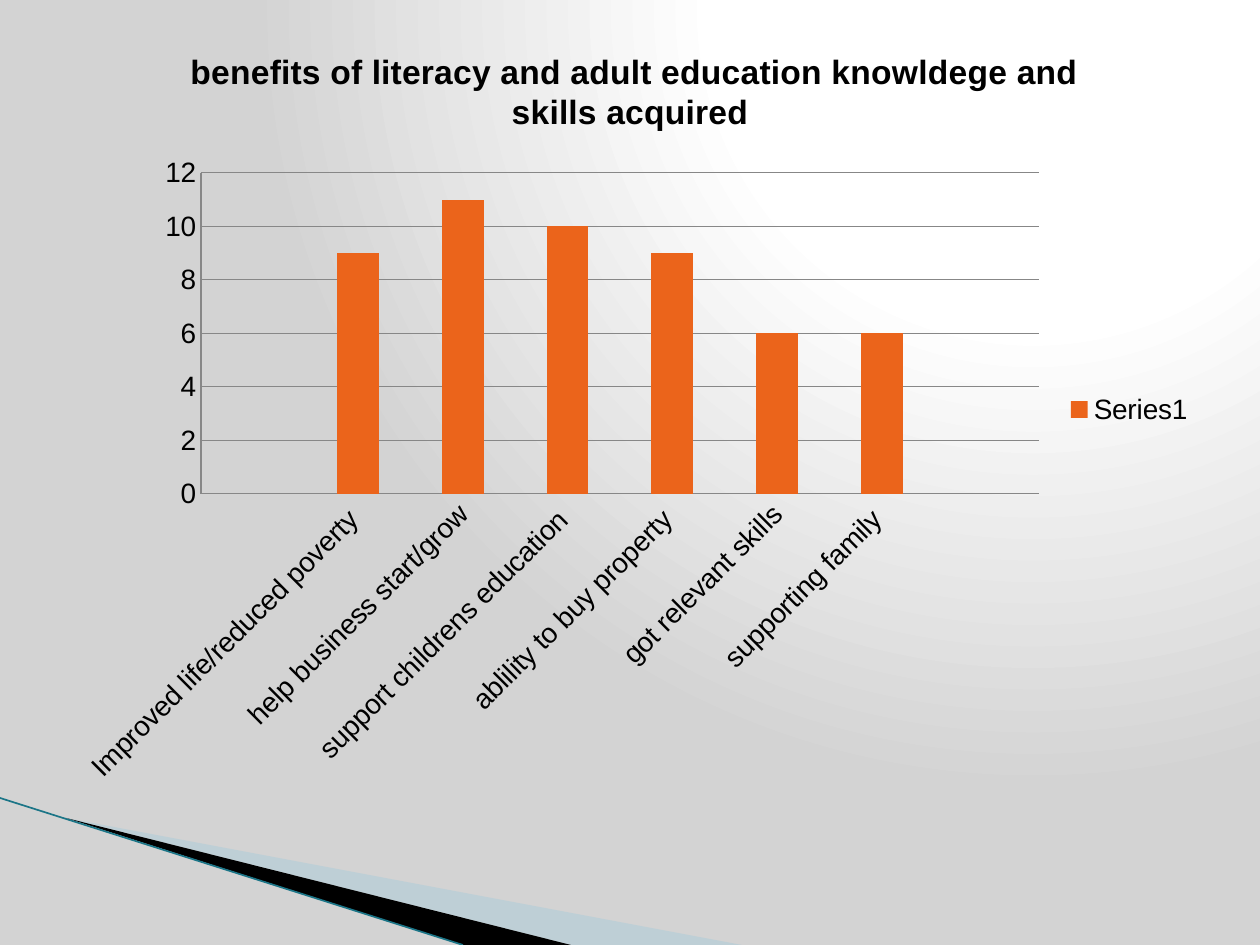
from lxml import etree
from pptx import Presentation
from pptx.chart.data import CategoryChartData
from pptx.dml.color import RGBColor
from pptx.enum.chart import XL_CHART_TYPE, XL_LEGEND_POSITION, XL_TICK_MARK
from pptx.enum.shapes import MSO_CONNECTOR
from pptx.oxml import parse_xml
from pptx.oxml.ns import nsdecls, qn
from pptx.util import Pt

COLUMNS = XL_CHART_TYPE.COLUMN_CLUSTERED
LEGEND_RIGHT = XL_LEGEND_POSITION.RIGHT
NO_TICKS = XL_TICK_MARK.NONE
STRAIGHT = MSO_CONNECTOR.STRAIGHT

EMU_PER_PX = 914400 / 126
SLIDE_WIDTH, SLIDE_HEIGHT = 1260, 945
FONT = "Arial"
COLORS = {
    "light": "FFFFFF",
    "shade": "D3D3D3",
    "pale_wedge": "A0CBDC",
    "dark": "000000",
    "edge": "1B7587",
    "bar": "EB641B",
    "grid": "878787",
}
TITLE = "benefits of literacy and adult education knowldege and skills acquired "
BENEFITS = [
    ("", None),
    ("Improved life/reduced poverty ", 9),
    ("help business start/grow", 11),
    ("support childrens education ", 10),
    ("ablility to buy property ", 9),
    ("got relevant skills", 6),
    ("supporting family ", 6),
    ("", None),
]


def px(length):
    return round(length * EMU_PER_PX)


def rgb(name):
    return RGBColor.from_string(COLORS[name])


def style_font(font, size, bold=False):
    font.name = FONT
    font.size = Pt(size)
    font.bold = bold
    font.color.rgb = rgb("dark")


def paint_background(slide):
    """Radial gradient, brightest near the top right."""
    fill = slide.background.fill
    fill.gradient()
    stops = "".join(
        f'<a:gs pos="{position * 1000}"><a:srgbClr val="{COLORS[name]}"/></a:gs>'
        for position, name in ((0, "light"), (40, "light"), (100, "shade"))
    )
    gradient = parse_xml(
        f'<a:gradFill {nsdecls("a")} rotWithShape="1"><a:gsLst>{stops}</a:gsLst>'
        '<a:path path="circle"><a:fillToRect l="65000" t="0" r="0" b="98000"/>'
        "</a:path></a:gradFill>"
    )
    background = slide.background._cSld.bg.bgPr
    background.replace(background.find(qn("a:gradFill")), gradient)


def add_wedge(slide, points, color, opacity=100):
    builder = slide.shapes.build_freeform(*points[0], scale=EMU_PER_PX)
    builder.add_line_segments(points[1:], close=True)
    shape = builder.convert_to_shape()
    shape.shadow.inherit = False
    shape.fill.solid()
    shape.fill.fore_color.rgb = rgb(color)
    shape.line.fill.background()
    if opacity < 100:
        fill_color = shape._element.spPr.find(".//" + qn("a:srgbClr"))
        etree.SubElement(fill_color, qn("a:alpha"), val=str(opacity * 1000))


def add_corner_sweep(slide, left, top, width, height):
    """Two wedges and an edge line that fan out from the left side."""
    right, bottom = left + width, top + height
    tip = (left + 66, top + 20)
    add_wedge(slide, [tip, (right, bottom), (left + 571, bottom)], "pale_wedge", 40)
    add_wedge(slide, [tip, (left + 571, bottom), (left + 463, bottom)], "dark")
    edge = slide.shapes.add_connector(
        STRAIGHT, px(left), px(top), px(left + 463), px(bottom)
    )
    edge.line.color.rgb = rgb("edge")
    edge.line.width = Pt(0.95)
    etree.SubElement(edge._element.spPr, qn("a:effectLst"))


def place_plot(chart, left, top, width, height):
    """Fix the inner plot area, given as fractions of the chart."""
    plot_area = chart._chartSpace.chart.plotArea
    for old_layout in plot_area.findall(qn("c:layout")):
        plot_area.remove(old_layout)
    places = "".join(
        f'<c:{tag} val="{value:.4f}"/>'
        for tag, value in (("x", left), ("y", top), ("w", width), ("h", height))
    )
    plot_area.insert(0, parse_xml(
        f'<c:layout {nsdecls("c")}><c:manualLayout><c:layoutTarget val="inner"/>'
        f'<c:xMode val="edge"/><c:yMode val="edge"/>{places}'
        "</c:manualLayout></c:layout>"
    ))


def add_benefits_chart(slide, left, top, width, height):
    data = CategoryChartData()
    data.categories = [label for label, _ in BENEFITS]
    data.add_series("Series1", [count for _, count in BENEFITS])
    chart = slide.shapes.add_chart(
        COLUMNS, px(left), px(top), px(width), px(height), data
    ).chart
    style_font(chart.font, 16)

    chart.has_title = True
    run = chart.chart_title.text_frame.paragraphs[0].add_run()
    run.text = TITLE
    style_font(run.font, 19.2, bold=True)
    chart.chart_title.include_in_layout = False

    chart.has_legend = True
    chart.legend.position = LEGEND_RIGHT
    chart.legend.include_in_layout = False

    plot = chart.plots[0]
    plot.gap_width = 150
    plot.vary_by_categories = False
    bars = plot.series[0].format.fill
    bars.solid()
    bars.fore_color.rgb = rgb("bar")

    for axis in (chart.category_axis, chart.value_axis):
        axis.major_tick_mark = axis.minor_tick_mark = NO_TICKS
        axis.format.line.color.rgb = rgb("grid")
        axis.format.line.width = Pt(0.75)
        style_font(axis.tick_labels.font, 16)
    labels = chart.category_axis._element.find(qn("c:txPr"))
    labels.find(qn("a:bodyPr")).set("rot", str(-45 * 60000))

    values = chart.value_axis
    values.minimum_scale, values.maximum_scale, values.major_unit = 0, 12, 2
    values.has_major_gridlines = True
    values.major_gridlines.format.line.color.rgb = rgb("grid")
    values.major_gridlines.format.line.width = Pt(0.75)
    place_plot(chart, 138 / width, 152 / height, 838 / width, 321 / height)


def main():
    presentation = Presentation()
    presentation.slide_width = px(SLIDE_WIDTH)
    presentation.slide_height = px(SLIDE_HEIGHT)
    slide = presentation.slides.add_slide(presentation.slide_layouts[6])
    paint_background(slide)
    add_corner_sweep(slide, 0, 798, 742, 147)
    add_benefits_chart(slide, 63, 21, 1144, 777)
    presentation.save("out.pptx")


if __name__ == "__main__":
    main()
